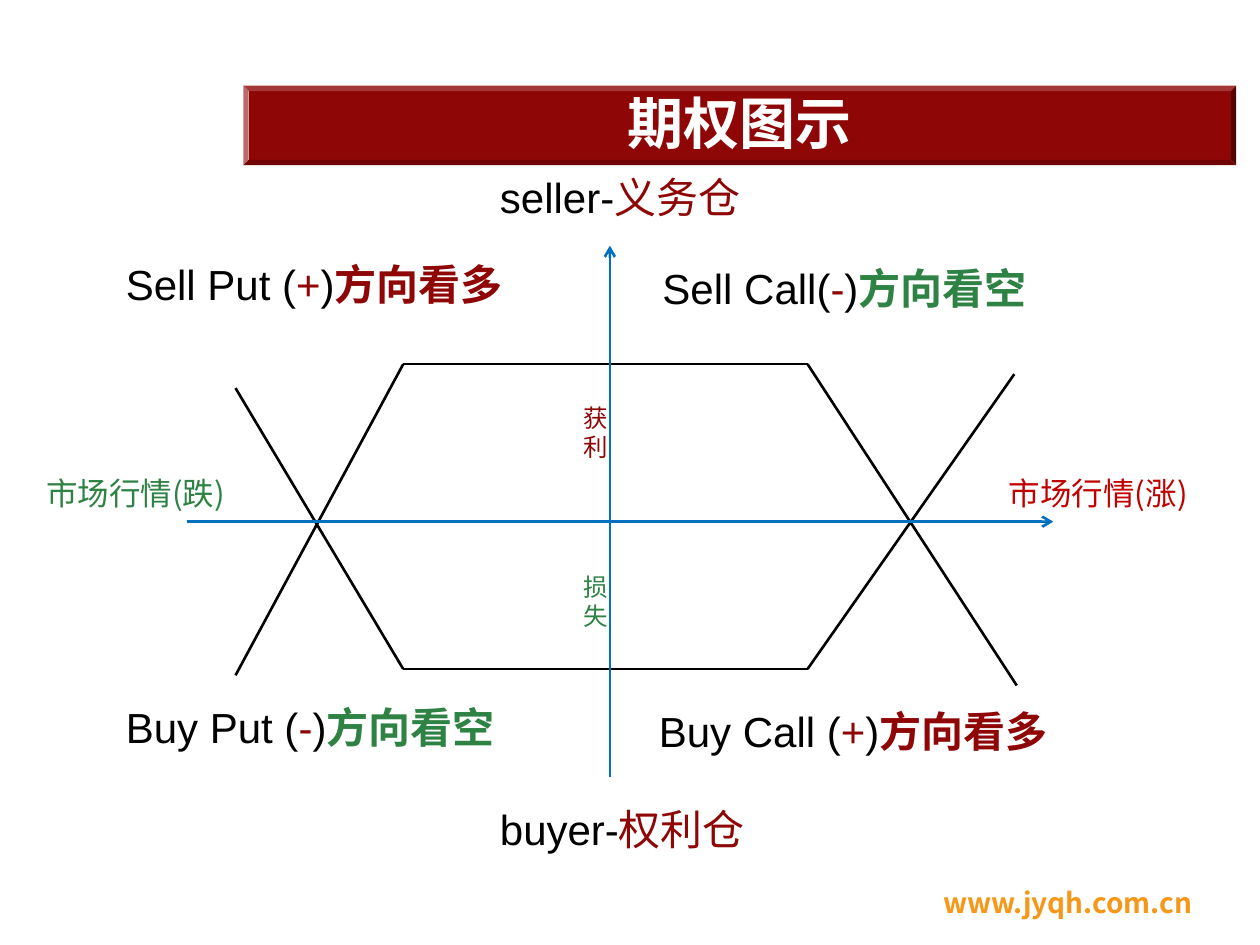
from lxml.etree import SubElement
from pptx import Presentation
from pptx.dml.color import RGBColor
from pptx.enum.shapes import MSO_CONNECTOR, MSO_SHAPE
from pptx.enum.text import MSO_ANCHOR, PP_ALIGN
from pptx.oxml.ns import qn
from pptx.util import Pt

COLORS = {"red": "8E0606", "green": "2E8244", "rise": "C00000", "black": "000000",
          "white": "FFFFFF", "orange": "F59719", "axis": "0070C0"}
CJK = "Noto Sans CJK SC"

deck = Presentation()
deck.slide_width, deck.slide_height = Pt(720), Pt(540)
page = deck.slides.add_slide(deck.slide_layouts[6])


def add_text(spans, at, size=24, font=CJK, align=PP_ALIGN.LEFT,
             anchor=MSO_ANCHOR.TOP, left_margin=7.2, right_margin=7.2):
    """Add a text box; each span is (text, colour name, bold)."""
    box = page.shapes.add_textbox(*map(Pt, at))
    frame = box.text_frame
    frame.word_wrap = True
    frame.vertical_anchor = anchor
    frame.margin_left, frame.margin_right = Pt(left_margin), Pt(right_margin)
    para = frame.paragraphs[0]
    para.alignment = align
    for text, color, bold in spans:
        span = para.add_run()
        span.text = text
        span.font.size = Pt(size)
        span.font.bold = bold
        span.font.name = font
        span.font.color.rgb = RGBColor.from_string(COLORS[color])
        east_asian = SubElement(span.font._element, qn("a:ea"))
        east_asian.set("typeface", CJK if font == "Arial" else font)


def add_line(start, end, color="black", arrow=False):
    line = page.shapes.add_connector(MSO_CONNECTOR.STRAIGHT, *map(Pt, (*start, *end)))
    line.line.width = Pt(1.5)
    line.line.color.rgb = RGBColor.from_string(COLORS[color])
    if arrow:
        SubElement(line.line._get_or_add_ln(), qn("a:tailEnd")).set("type", "arrow")
    SubElement(line._element.spPr, qn("a:effectLst"))


# Title bar
bar = page.shapes.add_shape(MSO_SHAPE.BEVEL, Pt(139), Pt(49), Pt(567.4), Pt(45.4))
bar.adjustments[0] = 0.068
bar.shadow.inherit = False
bar.fill.solid()
bar.fill.fore_color.rgb = RGBColor.from_string(COLORS["red"])
bar.line.fill.background()
add_text([("期权图示", "white", True)], (150.5, 45.4, 544.3, 48.2), size=32,
         font="DejaVu Sans", align=PP_ALIGN.CENTER, anchor=MSO_ANCHOR.MIDDLE)

# Web address
add_text([("www.jyqh.com.cn", "orange", True)], (490.3, 502.6, 198, 28), size=16,
         align=PP_ALIGN.RIGHT)

# Payoff curves: seller above, buyer below
left, right, top, bottom = 230.4, 461.5, 208.1, 382.3
payoffs = [
    [(134.6, 385.9), (left, top), (right, top), (581, 391.7)],
    [(134.6, 221.8), (left, bottom), (right, bottom), (579.6, 213.8)],
]
for points in payoffs:
    for start, end in zip(points, points[1:]):
        add_line(start, end)

# Quadrant labels
quadrants = [
    ("Sell Put (", "+", "方向看多", "red", (64.8, 144, 278, 36)),
    ("Sell Call(", "-", "方向看空", "green", (371.5, 146.2, 311.8, 36)),
    ("Buy Call (", "+", "方向看多", "red", (369.4, 399.6, 283.7, 36)),
    ("Buy Put (", "-", "方向看空", "green", (64.8, 397.4, 272.2, 36)),
]
for name, sign, view, color, at in quadrants:
    add_text([(name, "black", False), (sign, "red", False), (")", "black", False),
              (view, color, True)], at, font="Arial")

# Seller and buyer headings
for role, position, y in [("seller-", "义务仓", 94.3), ("buyer-", "权利仓", 455.8)]:
    add_text([(role, "black", False), (position, "red", False)],
             (258.5, y, 180, 36), font="Arial", left_margin=27.2, right_margin=0)

# Axis labels
for text, color, y in [("获利", "red", 226.8), ("损失", "green", 323.3)]:
    add_text([(text, color, False)], (326.2, y, 28.1, 41), size=14)
for text, color, x in [("市场行情(涨)", "rise", 569.5), ("市场行情(跌)", "green", 19.4)]:
    add_text([(text, color, False)], (x, 267.1, 124.6, 28.8), size=18)

# Axes
add_line((348.5, 444.2), (348.5, 140.4), "axis", arrow=True)
add_line((106.6, 298.1), (601.9, 298.1), "axis", arrow=True)

deck.save("out.pptx")
